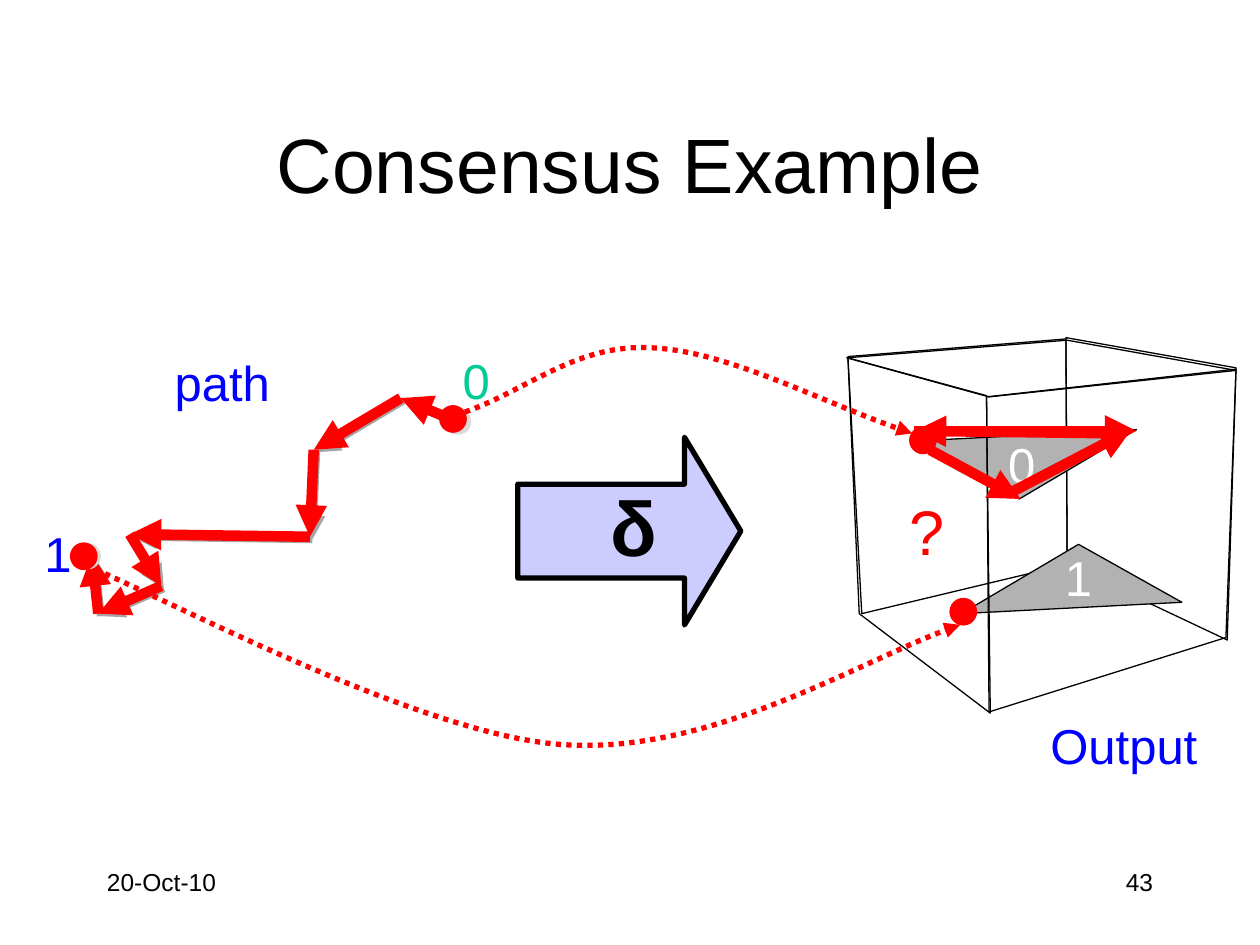
from itertools import pairwise

from lxml.etree import SubElement
from pptx import Presentation
from pptx.dml.color import RGBColor
from pptx.enum.dml import MSO_LINE
from pptx.enum.shapes import MSO_CONNECTOR, MSO_SHAPE
from pptx.enum.text import MSO_ANCHOR, PP_ALIGN
from pptx.oxml.ns import qn
from pptx.util import Inches, Pt

RED, BLUE, BLACK, GREY = "FF0000", "0000FF", "000000", "B2B2B2"
PATH_SHADOW, DOT_SHADOW = "A6A6A6", "D9D9D9"
DOT_SIZE = 0.21

PATH_POINTS = [(3.59, 3.33), (3.18, 3.16), (2.49, 3.57), (2.46, 4.26),
               (1.03, 4.24), (1.28, 4.65), (0.78, 4.87), (0.73, 4.4)]

# Outline of each face, back to front, and its fill
OUTPUT_FACES = [
    ([(8.47, 4.48), (9.74, 5.08), (9.81, 2.92), (8.46, 2.68)], None),
    ([(6.84, 4.87), (8.47, 4.48), (8.46, 2.69), (6.73, 2.83)], None),
    ([(6.72, 2.84), (7.85, 3.15), (9.81, 2.94), (8.47, 2.7)], None),
    ([(8.56, 4.32), (9.38, 4.78), (7.63, 4.87)], GREY),
    ([(8.09, 3.96), (7.27, 3.5), (9.02, 3.41)], GREY),
    ([(7.86, 5.66), (7.83, 3.14), (6.73, 2.84), (6.82, 4.87)], None),
    ([(7.83, 3.15), (7.85, 5.65), (9.73, 5.06), (9.81, 2.93)], None),
]

# Start point followed by three Bezier points per segment
MAPPING_CURVES = [
    [(3.69, 3.27), (4.18, 3.1), (4.57, 2.73), (5.16, 2.76),
     (5.75, 2.78), (6.55, 3.21), (7.24, 3.44)],
    [(0.68, 4.49), (1.17, 4.67), (3.32, 5.84), (4.47, 5.91),
     (5.63, 5.99), (6.92, 5.19), (7.62, 4.96)],
]

OUTPUT_ARROWS = [
    ((7.38, 3.57), (8.1, 3.96)),
    ((8, 3.92), (8.98, 3.41)),
    ((8.89, 3.44), (7.26, 3.42)),
    ((7.25, 3.42), (9.02, 3.42)),
]


def color(hex_string):
    return RGBColor.from_string(hex_string)


def write(frame, text, size=28, fill=BLACK, bold=False, align=PP_ALIGN.CENTER,
          anchor=MSO_ANCHOR.MIDDLE, wrap=True):
    frame.word_wrap = wrap
    frame.vertical_anchor = anchor
    para = frame.paragraphs[0]
    para.alignment = align
    span = para.add_run()
    span.text = text
    span.font.name = "Arial"
    span.font.size = Pt(size)
    span.font.bold = bold
    span.font.color.rgb = color(fill)


def add_arrowhead(shape):
    outline = shape.element.spPr.find(qn("a:ln"))
    SubElement(outline, qn("a:tailEnd"), type="triangle")


def bend(shape):
    """Turn each three straight segments of a freeform into one Bezier segment."""
    outline = next(shape.element.iter(qn("a:path")))
    segments = outline.findall(qn("a:lnTo"))
    for start in range(0, len(segments), 3):
        curve = SubElement(outline, qn("a:cubicBezTo"))
        for segment in segments[start:start + 3]:
            curve.append(segment[0])
            outline.remove(segment)


class Sketch:
    def __init__(self, deck):
        self.page = deck.slides.add_slide(deck.slide_layouts[5])
        self.shapes = self.page.shapes

    def paint(self, shape, fill=None, line=None, weight=0.75):
        shape.shadow.inherit = False
        if fill:
            shape.fill.solid()
            shape.fill.fore_color.rgb = color(fill)
        else:
            shape.fill.background()
        if line:
            shape.line.color.rgb = color(line)
            shape.line.width = Pt(weight)
        else:
            shape.line.fill.background()
        return shape

    def title(self, text, left, top, width, height):
        box = self.shapes.title
        box.left, box.top = Inches(left), Inches(top)
        box.width, box.height = Inches(width), Inches(height)
        write(box.text_frame, text, size=44)

    def text(self, text, left, top, width, height, **style):
        box = self.shapes.add_textbox(Inches(left), Inches(top),
                                      Inches(width), Inches(height))
        write(box.text_frame, text, **style)

    def preset(self, kind, left, top, width, height, **style):
        shape = self.shapes.add_shape(kind, Inches(left), Inches(top),
                                      Inches(width), Inches(height))
        return self.paint(shape, **style)

    def dot(self, left, top, fill=RED, line=RED):
        self.preset(MSO_SHAPE.OVAL, left, top, DOT_SIZE, DOT_SIZE,
                    fill=fill, line=line)

    def arrow(self, start, end, fill=RED, weight=6):
        x1, y1, x2, y2 = map(Inches, (*start, *end))
        arrow = self.shapes.add_connector(MSO_CONNECTOR.STRAIGHT, x1, y1, x2, y2)
        arrow.line.color.rgb = color(fill)
        arrow.line.width = Pt(weight)
        add_arrowhead(arrow)
        SubElement(arrow.element.spPr, qn("a:effectLst"))

    def outline(self, points, close=True, **style):
        corners = [(Inches(x), Inches(y)) for x, y in points]
        builder = self.shapes.build_freeform(*corners[0])
        builder.add_line_segments(corners[1:], close=close)
        return self.paint(builder.convert_to_shape(), **style)

    def dotted_curve(self, points):
        shape = self.outline(points, close=False, line=RED, weight=3)
        bend(shape)
        shape.line.dash_style = MSO_LINE.ROUND_DOT
        add_arrowhead(shape)


def main():
    deck = Presentation()
    deck.slide_width, deck.slide_height = Inches(10), Inches(7.5)
    sketch = Sketch(deck)

    sketch.title("Consensus Example", 0.75, 0.67, 8.5, 1.25)
    footer = {"size": 14, "anchor": MSO_ANCHOR.TOP}
    sketch.text("20-Oct-10", 0.75, 6.83, 2.08, 0.5, align=PP_ALIGN.LEFT, **footer)
    sketch.text("43", 7.17, 6.83, 2.08, 0.5, align=PP_ALIGN.RIGHT, **footer)

    shadow_points = [(x + 0.02, y + 0.02) for x, y in PATH_POINTS]
    for start, end in pairwise(shadow_points):
        sketch.arrow(start, end, fill=PATH_SHADOW, weight=4.5)
    for start, end in pairwise(PATH_POINTS):
        sketch.arrow(start, end)

    for points, fill in OUTPUT_FACES:
        sketch.outline(points, fill=fill, line=BLACK)

    block = sketch.preset(MSO_SHAPE.RIGHT_ARROW, 4.11, 3.47, 1.77, 1.49,
                          fill="CCCCFF", line=BLACK, weight=3)
    block.adjustments[1] = 0.3
    sketch.text("δ", 4.75, 3.76, 0.5, 0.83, size=44, bold=True, wrap=False)

    sketch.text("Output", 8.23, 5.63, 1.38, 0.57, fill=BLUE, wrap=False)
    sketch.text("path", 0.73, 2.75, 2.07, 0.57, fill=BLUE)
    for digit, left, top, fill in [("1", 0.24, 4.1, BLUE),
                                   ("0", 3.56, 2.73, "00CC99"),
                                   ("0", 7.89, 3.4, "FFFFFF"),
                                   ("1", 8.34, 4.29, "FFFFFF")]:
        sketch.text(digit, left, top, 0.44, 0.57, fill=fill)

    for left, top in [(0.59, 4.31), (3.53, 3.24)]:
        sketch.dot(left, top, fill=DOT_SHADOW, line=None)
    for left, top in [(7.22, 3.39), (7.54, 4.75), (0.56, 4.31), (3.49, 3.22)]:
        sketch.dot(left, top)

    for points in MAPPING_CURVES:
        sketch.dotted_curve(points)
    for start, end in OUTPUT_ARROWS:
        sketch.arrow(start, end)
    sketch.text("?", 7.12, 3.85, 0.48, 0.71, size=36, fill=RED, wrap=False)

    deck.save("out.pptx")


if __name__ == "__main__":
    main()
